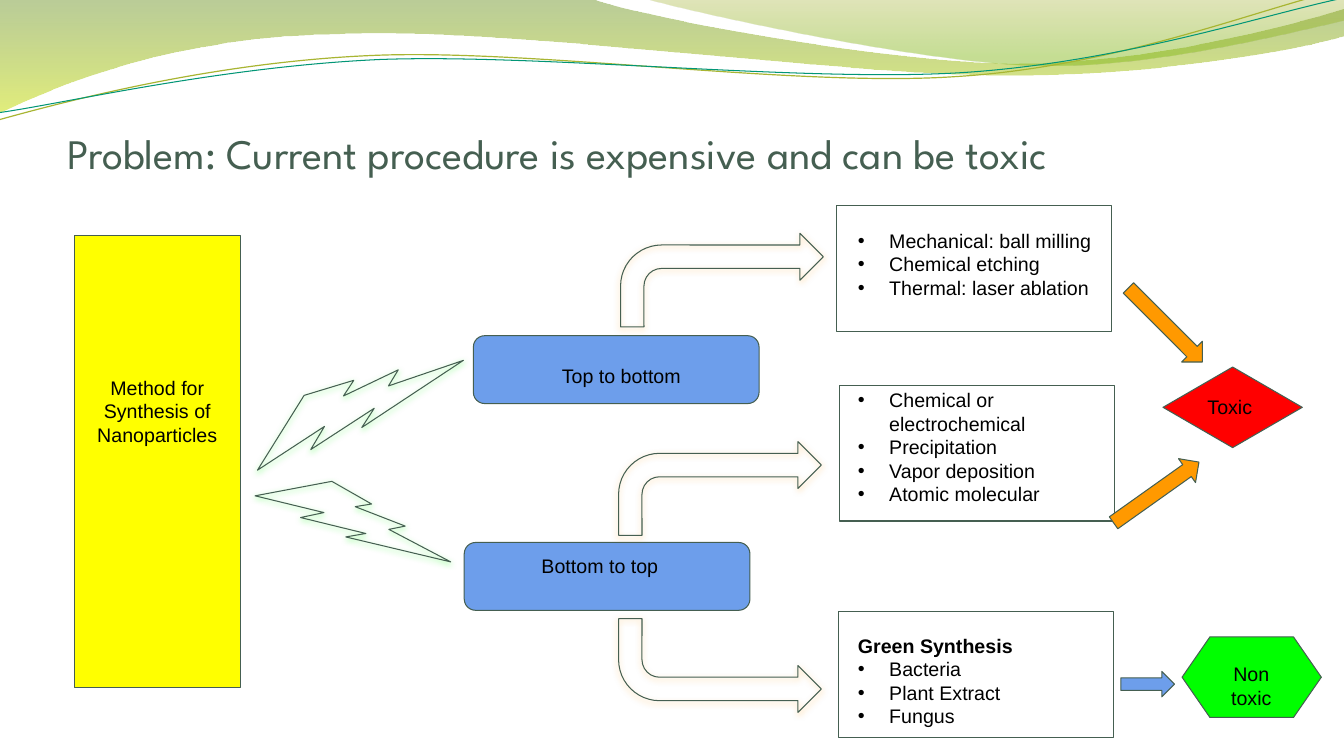
from lxml import etree
from pptx import Presentation
from pptx.dml.color import RGBColor
from pptx.enum.shapes import MSO_SHAPE as SHAPE
from pptx.enum.text import MSO_ANCHOR as ANCHOR, PP_ALIGN as ALIGN
from pptx.oxml.ns import qn
from pptx.util import Cm, Pt

INK, BLACK, YELLOW = "455F51", "000000", "FFFF00"
BLUE, RED, GREEN, ORANGE = "6D9EEB", "FF0000", "00FF00", "FF9900"


def rgb(value):
    return RGBColor.from_string(value)


def add_xml(parent, tag, **attrs):
    return etree.SubElement(parent, qn(tag), attrs)


class Diagram:
    font, size, line_width = "Arial", 14, 0.75

    def __init__(self, slide):
        self.slide = slide

    def outline(self, sp, color, width=line_width):
        sp.line.color.rgb = rgb(color)
        sp.line.width = Pt(width)

    def freeform(self, start, steps, close):
        """Steps of one point are straight; steps of three points are cubic curves."""
        emu = [(Cm(x), Cm(y)) for x, y in [start, *(pt for step in steps for pt in step)]]
        builder = self.slide.shapes.build_freeform(*emu[0])
        builder.add_line_segments(emu[1:], close=close)
        sp = builder.convert_to_shape()
        sp.shadow.inherit = False
        lines = iter(list(sp._element.spPr.iter(qn("a:lnTo"))))
        for step in steps:
            first, *others = [next(lines) for _ in step]
            if others:
                curve = etree.Element(qn("a:cubicBezTo"))
                first.addprevious(curve)
                for line in (first, *others):
                    curve.append(line[0])
                    line.getparent().remove(line)
        return sp

    def wave(self, start, steps, stops):
        sp = self.freeform(start, steps, True)
        sp.line.fill.background()
        sp.fill.gradient()
        sp.fill.gradient_angle = 270
        for stop, (position, color, _) in zip(sp.fill.gradient_stops, stops):
            stop.position = position
            stop.color.rgb = rgb(color)
        colors = sp._element.spPr.iter(qn("a:srgbClr"))
        for clr, (_, _, alpha) in zip(list(colors), stops):
            add_xml(clr, "a:alpha", val=str(alpha * 1000))

    def strand(self, start, steps, color, width):
        sp = self.freeform(start, steps, False)
        sp.fill.background()
        self.outline(sp, color, width)

    def shape(self, kind, x, y, w, h, fill=None, rotation=0, glow=None, adjust=(), flip=False):
        sp = self.slide.shapes.add_shape(kind, Cm(x), Cm(y), Cm(w), Cm(h))
        sp.shadow.inherit = False
        sp.rotation = rotation
        for i, value in enumerate(adjust):
            sp.adjustments[i] = value
        if fill:
            sp.fill.solid()
            sp.fill.fore_color.rgb = rgb(fill)
        else:
            sp.fill.background()
        self.outline(sp, INK)
        spPr = sp._element.spPr
        if flip:
            spPr.find(qn("a:xfrm")).set("flipH", "1")
        if glow:
            shadow = add_xml(spPr.find(qn("a:effectLst")), "a:outerShdw",
                             blurRad=str(Pt(4.5)), dist=str(Pt(1.5)), dir="5400000",
                             algn="bl", rotWithShape="0")
            add_xml(add_xml(shadow, "a:srgbClr", val=glow), "a:alpha", val="50000")

    def text(self, x, y, w, h, lines, align=ALIGN.LEFT, heading=None, bullets=False):
        tf = self.slide.shapes.add_textbox(Cm(x), Cm(y), Cm(w), Cm(h)).text_frame
        tf.word_wrap = True
        tf.margin_left = tf.margin_right = tf.margin_top = tf.margin_bottom = Cm(0.25)
        rows = ([(heading, True)] if heading else []) + [(line, False) for line in lines]
        for i, (line, bold) in enumerate(rows):
            p = tf.paragraphs[0] if i == 0 else tf.add_paragraph()
            p.alignment = align
            if bullets and not bold:
                self.bullet(p)
            self.run(p, line, bold=bold)

    def bullet(self, p):
        pPr = p._p.get_or_add_pPr()
        pPr.set("marL", str(Cm(0.79)))
        pPr.set("indent", str(-Cm(0.79)))
        add_xml(add_xml(pPr, "a:buClr"), "a:srgbClr", val=BLACK)
        add_xml(pPr, "a:buFont", typeface=self.font)
        add_xml(pPr, "a:buChar", char="•")

    def run(self, p, line, font=font, size=size, color=BLACK, bold=False):
        r = p.add_run()
        r.text = line
        r.font.name, r.font.size, r.font.bold = font, Pt(size), bold
        r.font.color.rgb = rgb(color)

    def title(self, x, y, w, h, line):
        tf = self.slide.shapes.add_textbox(Cm(x), Cm(y), Cm(w), Cm(h)).text_frame
        tf.word_wrap = True
        tf.vertical_anchor = ANCHOR.BOTTOM
        tf.margin_left = tf.margin_right = tf.margin_bottom = 0
        self.run(tf.paragraphs[0], line, "League Spartan", 30, INK)


def main():
    prs = Presentation()
    prs.slide_width, prs.slide_height = Cm(33.87), Cm(19.05)
    d = Diagram(prs.slides.add_slide(prs.slide_layouts[6]))

    # Waves along the top
    d.wave((0, 0), [
        [(14.91, -0.03)],
        [(16.1, 0.43), (22.45, 1.6), (25.68, 1.6)],
        [(28.88, 1.6), (32.44, 0.66), (33.86, 0.23)],
        [(33.88, 0.91)],
        [(33.3, 1.12), (29.44, 1.93), (25.25, 1.9)],
        [(21.06, 1.9), (12.93, 0.71), (8.71, 0.86)],
        [(4.37, 0.91), (1.55, 2.11), (-0.05, 2.87)],
    ], [(0, "668F1B", 45), (1, "CAE00E", 55)])
    d.wave((16.21, -0.03), [
        [(17.25, 0.28), (23.09, 1.57), (26.04, 1.65)],
        [(28.96, 1.75), (32.56, 0.81), (33.86, 0.53)],
        [(33.86, 0)],
    ], [(0, "99A719", 30), (0.8, "80B814", 45)])
    d.strand((-0.03, 3.02), [
        [(1.6, 2.57), (5.33, 1.57), (9.37, 1.4)],
        [(13.39, 1.22), (20.04, 2.21), (24.1, 1.93)],
        [(28.19, 1.68), (31.78, 0.2), (33.78, -0.25)],
    ], "A8B532", 0.85)
    d.strand((-0.03, 2.84), [
        [(1.57, 2.62), (5.54, 1.68), (9.58, 1.5)],
        [(13.64, 1.35), (20.22, 2.08), (24.26, 1.83)],
        [(28.3, 1.57), (31.88, 0.36), (33.86, -0.05)],
    ], "029676", 0.75)

    d.title(1.7, 1.3, 30.48, 3.18, "Problem: Current procedure is expensive and can be toxic")

    # Starting point and the bolts leading from it
    d.shape(SHAPE.RECTANGLE, 1.87, 5.94, 4.19, 11.38, YELLOW)
    d.text(1.96, 9.22, 4.01, 2.44, ["Method for Synthesis of Nanoparticles"], ALIGN.CENTER)
    d.shape(SHAPE.LIGHTNING_BOLT, 6.43, 12.13, 4.93, 2.03, glow=GREEN)
    d.shape(SHAPE.LIGHTNING_BOLT, 6.15, 9.15, 5.56, 2.34, rotation=312.9, glow=GREEN)

    # Two approaches
    for x, y, text_x, text_y, text_w, label in [
        (11.93, 8.46, 12.42, 8.92, 6.48, "Top to bottom"),
        (11.7, 13.67, 12.16, 13.7, 5.92, "Bottom to top"),
    ]:
        d.shape(SHAPE.FLOWCHART_ALTERNATE_PROCESS, x, y, 7.2, 1.71, BLUE)
        d.text(text_x, text_y, text_w, 0.79, [label], ALIGN.CENTER)

    # Techniques
    for x, y, h, text_y, text_h, heading, techniques in [
        (21.08, 5.18, 3.18, 5.51, 2.36, None,
         ["Mechanical: ball milling", "Chemical etching", "Thermal: laser ablation"]),
        (21.15, 9.72, 3.41, 9.53, 2.67, None,
         ["Chemical or electrochemical", "Precipitation", "Vapor deposition",
          "Atomic molecular"]),
        (21.13, 15.41, 3.18, 15.72, 2.67, "Green Synthesis",
         ["Bacteria", "Plant Extract", "Fungus"]),
    ]:
        d.shape(SHAPE.RECTANGLE, x, y, 6.93, h)
        d.text(21.37, text_y, 6.48, text_h, techniques, heading=heading, bullets=True)

    # Outcomes
    d.shape(SHAPE.FLOWCHART_DECISION, 29.31, 9.25, 3.51, 2.03, RED)
    d.text(30.18, 9.7, 2.01, 0.79, ["Toxic"])
    d.shape(SHAPE.FLOWCHART_PREPARATION, 29.79, 16.05, 3.51, 2.03, GREEN)
    d.text(30.43, 16.43, 2.21, 1.14, ["Non toxic"], ALIGN.CENTER)

    # Bent arrows from approaches to techniques
    for x, y, rotation in [(15.64, 5.88, 0), (15.59, 11.13, 0), (15.59, 15.59, 180)]:
        d.shape(SHAPE.BENT_ARROW, x, y, 5.11, 2.36, rotation=rotation, glow=ORANGE,
                adjust=(0.25, 0.25, 0.25, 0.438), flip=rotation == 180)

    # Arrows from techniques to outcomes
    for x, y, w, h, fill, rotation in [
        (28.25, 16.92, 1.35, 0.64, BLUE, 0),
        (27.82, 12.04, 2.64, 0.74, ORANGE, 324.6),
        (28.05, 7.82, 2.64, 0.74, ORANGE, 45),
    ]:
        d.shape(SHAPE.RIGHT_ARROW, x, y, w, h, fill, rotation)

    prs.save("out.pptx")


if __name__ == "__main__":
    main()
